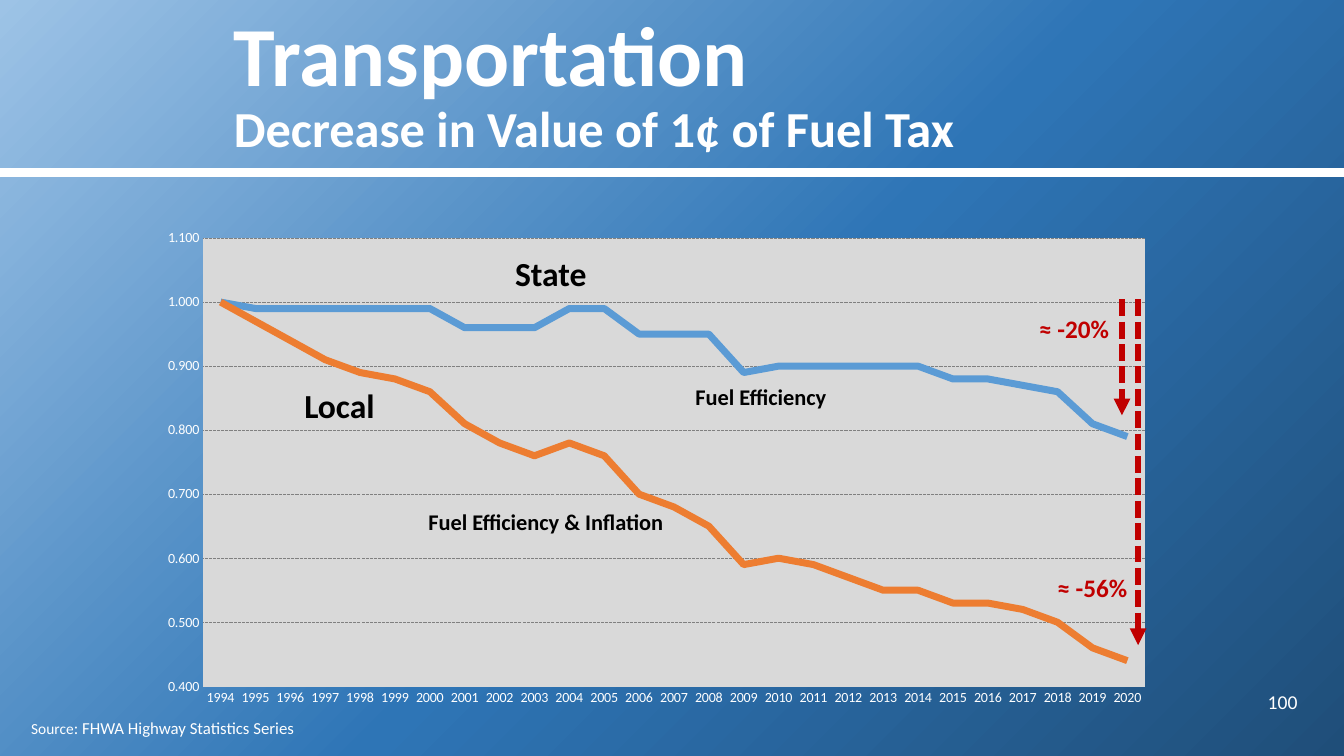
from collections import namedtuple

from pptx import Presentation
from pptx.chart.data import CategoryChartData
from pptx.dml.color import RGBColor
from pptx.enum.chart import XL_CHART_TYPE, XL_TICK_MARK
from pptx.enum.dml import MSO_LINE
from pptx.enum.shapes import MSO_CONNECTOR
from pptx.enum.text import MSO_ANCHOR, MSO_AUTO_SIZE, PP_ALIGN
from pptx.oxml import parse_xml
from pptx.oxml.ns import nsdecls, qn
from pptx.util import Inches, Pt
from lxml.etree import SubElement

FONT = "Calibri"
WHITE = RGBColor(0xFF, 0xFF, 0xFF)
BLACK = RGBColor(0x00, 0x00, 0x00)
RED = RGBColor(0xC0, 0x00, 0x00)
BLUE = RGBColor(0x5B, 0x9B, 0xD5)
ORANGE = RGBColor(0xED, 0x7D, 0x31)
PALE_GRAY = RGBColor(0xD9, 0xD9, 0xD9)
GRID_GRAY = RGBColor(0x80, 0x80, 0x80)
BACKDROP = [(0, RGBColor(0x9D, 0xC3, 0xE6)), (53, RGBColor(0x2E, 0x75, 0xB6)),
            (100, RGBColor(0x1F, 0x4E, 0x79))]

# The slide is a grid of 100 columns by 100 rows
WIDTH, HEIGHT = Inches(13.33), Inches(7.5)
Box = namedtuple("Box", "left top width height")

YEARS = [str(year) for year in range(1994, 2021)]
STATE = [1, 0.99, 0.99, 0.99, 0.99, 0.99, 0.99, 0.96, 0.96, 0.96, 0.99, 0.99, 0.95, 0.95,
         0.95, 0.89, 0.9, 0.9, 0.9, 0.9, 0.9, 0.88, 0.88, 0.87, 0.86, 0.81, 0.79]
LOCAL = [1, 0.97, 0.94, 0.91, 0.89, 0.88, 0.86, 0.81, 0.78, 0.76, 0.78, 0.76, 0.7, 0.68,
         0.65, 0.59, 0.6, 0.59, 0.57, 0.55, 0.55, 0.53, 0.53, 0.52, 0.5, 0.46, 0.44]

# Text, position inside the chart box, size, colour
CHART_LABELS = [
    ("Fuel Efficiency", Box(40.05, 20.93, 14.4, 4.93), 16, BLACK),
    ("Fuel Efficiency & Inflation", Box(20.18, 37.47, 19.58, 4.93), 16, BLACK),
    ("State", Box(26.63, 3.73, 9.23, 6.67), 24, BLACK),
    ("Local", Box(10.95, 21.2, 9.23, 6.67), 24, BLACK),
    ("≈ -20%", Box(65.63, 11.73, 7.5, 5.33), 18, RED),
    ("≈ -56%", Box(66.98, 46, 7.5, 5.33), 18, RED),
]
# Column, first row and last row inside the chart box
DROPS = [(72.53, 10.53, 25.87), (73.73, 10.53, 56.27)]


def across(columns):
    return int(WIDTH * columns / 100)


def down(rows):
    return int(HEIGHT * rows / 100)


def lengths(box):
    return across(box.left), down(box.top), across(box.width), down(box.height)


def inside(outer, inner):
    return Box(outer.left + inner.left, outer.top + inner.top, inner.width, inner.height)


def style_font(font, size, color, bold=False):
    font.name, font.size, font.bold = FONT, Pt(size), bold
    font.color.rgb = color


def add_span(para, text, size, color=WHITE, bold=False, shadow=False):
    span = para.add_run()
    span.text = text
    style_font(span.font, size, color, bold)
    if shadow:
        effect = parse_xml(
            f'<a:effectLst {nsdecls("a")}><a:outerShdw blurRad="38100" dist="38100" '
            'dir="2700000" algn="tl"><a:srgbClr val="000000"><a:alpha val="43000"/>'
            '</a:srgbClr></a:outerShdw></a:effectLst>')
        span.font._element.find(qn("a:solidFill")).addnext(effect)


def add_text(page, box, spans, color=WHITE, bold=False, align=PP_ALIGN.LEFT,
             anchor=MSO_ANCHOR.TOP):
    frame = page.shapes.add_textbox(*lengths(box)).text_frame
    frame.word_wrap, frame.vertical_anchor = True, anchor
    para = frame.paragraphs[0]
    para.alignment = align
    for text, size in spans:
        add_span(para, text, size, color, bold)


def add_line(page, start, end, color, width, arrow=False):
    line = page.shapes.add_connector(MSO_CONNECTOR.STRAIGHT, across(start[0]), down(start[1]),
                                     across(end[0]), down(end[1]))
    line.line.color.rgb, line.line.width = color, Pt(width)
    if arrow:
        line.line.dash_style = MSO_LINE.SQUARE_DOT
        SubElement(line.line._get_or_add_ln(), qn("a:tailEnd"), type="triangle")
    SubElement(line._element.spPr, qn("a:effectLst"))


def paint_background(page):
    stops = "".join(f'<a:gs pos="{share * 1000}"><a:srgbClr val="{color}"/></a:gs>'
                    for share, color in BACKDROP)
    page._element.cSld.insert(0, parse_xml(
        f'<p:bg {nsdecls("p", "a")}><p:bgPr><a:gradFill rotWithShape="1"><a:gsLst>{stops}'
        '</a:gsLst><a:path path="circle"><a:fillToRect r="100000" b="100000"/></a:path>'
        '</a:gradFill><a:effectLst/></p:bgPr></p:bg>'))


def add_header(page, box):
    title = page.shapes.title
    title.left, title.top, title.width, title.height = lengths(box)
    frame = title.text_frame
    frame.auto_size, frame.vertical_anchor = MSO_AUTO_SIZE.NONE, MSO_ANCHOR.MIDDLE
    frame.word_wrap = True
    para = frame.paragraphs[0]
    para.alignment, para.line_spacing = PP_ALIGN.LEFT, 0.9
    add_span(para, "Transportation", 60, bold=True, shadow=True)
    para.add_line_break()
    add_span(para, "Decrease in Value of 1¢ of Fuel Tax", 36, bold=True, shadow=True)
    bottom = box.top + box.height
    add_line(page, (0, bottom), (100, bottom), WHITE, 6)


def add_value_chart(page, box):
    data = CategoryChartData(number_format="0.000")
    data.categories = YEARS
    data.add_series("State", STATE)
    data.add_series("Local", LOCAL)
    chart = page.shapes.add_chart(XL_CHART_TYPE.LINE, *lengths(box), data).chart
    chart.has_legend = chart.has_title = False
    style_font(chart.font, 10, BLACK)
    plot = chart.plots[0]
    plot.vary_by_categories = False
    for series, color in zip(plot.series, (BLUE, ORANGE)):
        series.smooth = False
        series.format.line.color.rgb, series.format.line.width = color, Pt(5)

    # Axes
    years, values = chart.category_axis, chart.value_axis
    for axis in (years, values):
        axis.major_tick_mark = axis.minor_tick_mark = XL_TICK_MARK.NONE
        style_font(axis.tick_labels.font, 10, WHITE)
    years.format.line.color.rgb, years.format.line.width = PALE_GRAY, Pt(0.75)
    values.format.line.fill.background()
    values.minimum_scale, values.maximum_scale, values.major_unit = 0.4, 1.1, 0.1
    values.tick_labels.number_format = "0.000"
    values.tick_labels.number_format_is_linked = False
    grid = values.major_gridlines.format.line
    grid.color.rgb, grid.width, grid.dash_style = GRID_GRAY, Pt(0.75), MSO_LINE.SQUARE_DOT

    # Plot area: place and fill
    area = chart._chartSpace.chart.plotArea
    for layout in area.findall(qn("c:layout")):
        area.remove(layout)
    area.insert(0, parse_xml(
        f'<c:layout {nsdecls("c")}><c:manualLayout><c:layoutTarget val="inner"/>'
        '<c:xMode val="edge"/><c:yMode val="edge"/><c:x val="0.055"/><c:y val="0.037"/>'
        '<c:w val="0.925"/><c:h val="0.904"/></c:manualLayout></c:layout>'))
    area.append(parse_xml(
        f'<c:spPr {nsdecls("c", "a")}><a:solidFill><a:srgbClr val="{PALE_GRAY}"/>'
        '</a:solidFill><a:ln><a:noFill/></a:ln></c:spPr>'))


def add_chart_notes(page, box):
    for text, place, size, color in CHART_LABELS:
        add_text(page, inside(box, place), [(text, size)], color=color, bold=True)
    for column, first, last in DROPS:
        add_line(page, (box.left + column, box.top + first),
                 (box.left + column, box.top + last), RED, 4, arrow=True)


def add_footer(page, source_box, number_box):
    add_text(page, source_box, [("Source", 11), (": FHWA Highway Statistics Series", 12)])
    add_text(page, number_box, [("100", 14)], align=PP_ALIGN.RIGHT, anchor=MSO_ANCHOR.MIDDLE)


def main():
    deck = Presentation()
    deck.slide_width, deck.slide_height = WIDTH, HEIGHT
    page = deck.slides.add_slide(deck.slide_layouts[5])
    chart_box = Box(10.95, 29.07, 75.75, 65.6)
    paint_background(page)
    add_header(page, Box(16.65, 0, 80.55, 22.8))
    add_value_chart(page, chart_box)
    add_chart_notes(page, chart_box)
    add_footer(page, Box(1.58, 94.27, 38.03, 4), Box(90.6, 90.13, 6.68, 5.33))
    deck.save("out.pptx")


if __name__ == "__main__":
    main()
